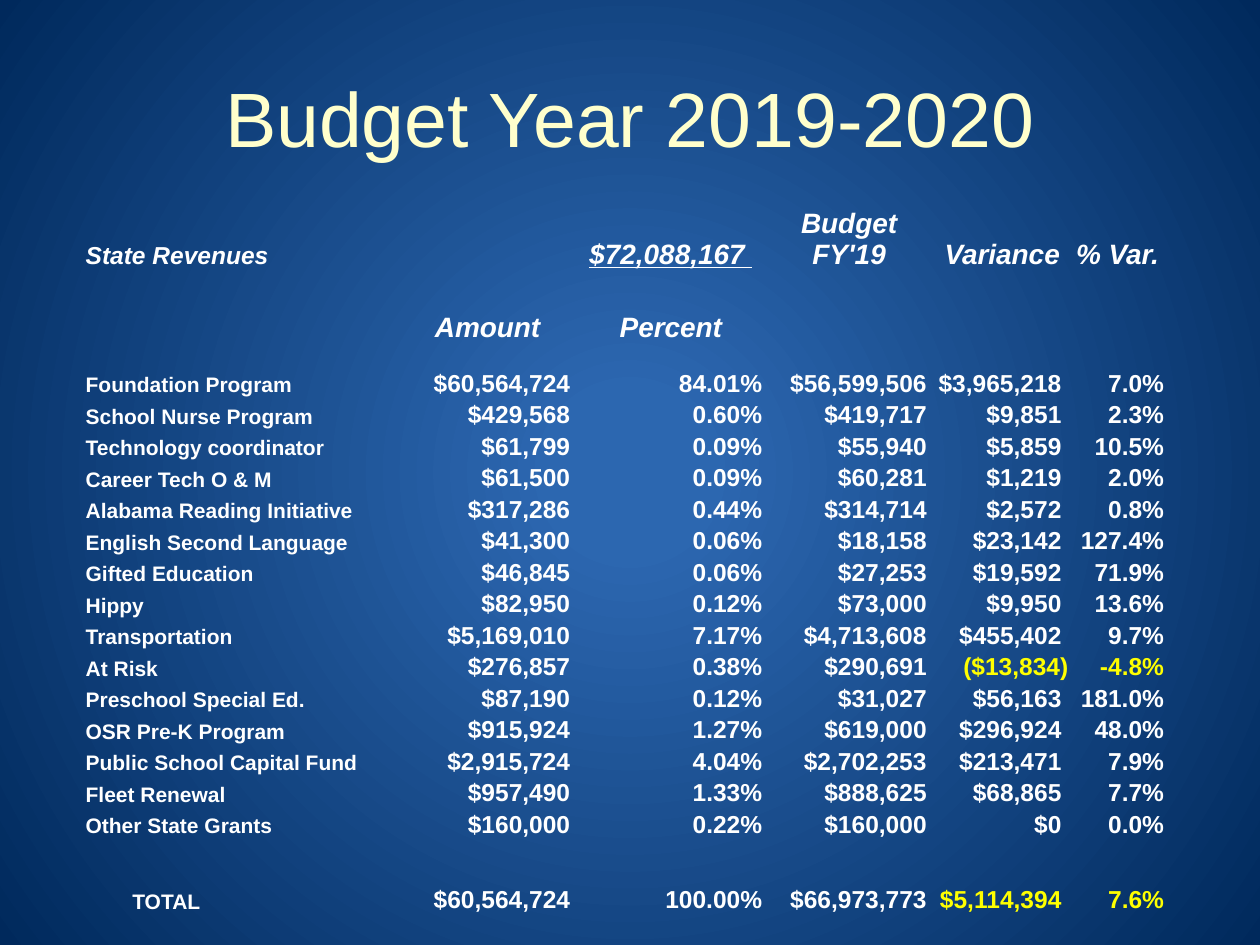
from dataclasses import dataclass

from lxml import etree
from pptx import Presentation
from pptx.dml.color import RGBColor
from pptx.enum.text import MSO_ANCHOR, PP_ALIGN
from pptx.oxml.ns import qn
from pptx.util import Inches, Pt

LEFT, CENTER, RIGHT = PP_ALIGN.LEFT, PP_ALIGN.CENTER, PP_ALIGN.RIGHT
BOTTOM, MIDDLE = MSO_ANCHOR.BOTTOM, MSO_ANCHOR.MIDDLE

FONT = "Arial"
CREAM = RGBColor(0xFF, 0xFF, 0xCC)
WHITE = RGBColor(0xFF, 0xFF, 0xFF)
YELLOW = RGBColor(0xFF, 0xFF, 0x00)
BLUE = RGBColor(0x2C, 0x67, 0xB0)
NAVY = RGBColor(0x00, 0x29, 0x5C)

NO_STYLE_NO_GRID = "{2D5ABB26-0587-4C30-8999-92F81FD0307C}"
COLUMN_WIDTHS = [2.48, 1.44, 1.47, 1.36, 1.07, 0.76]
ROW_HEIGHTS = [0.22, 0.44, 0.29, 0.29, 0.18] + [0.25] * 15 + [0.31, 0.29, 0.18]
HEADER_ROW, SUBHEADER_ROW, FIRST_REVENUE_ROW, TOTAL_ROW = 1, 3, 5, 21
TOTAL_INDENT = 0.38


@dataclass
class Revenue:
    name: str
    amount: str
    percent: str
    budget: str
    variance: str
    change: str
    highlight: bool = False


@dataclass
class CellStyle:
    size: int
    align: PP_ALIGN
    color: RGBColor = WHITE
    italic: bool = False
    underline: bool = False
    indent: float = 0.01


REVENUES = [
    Revenue("Foundation Program", "$60,564,724 ", "84.01%", "$56,599,506 ", "$3,965,218 ", "7.0%"),
    Revenue("School Nurse Program", "$429,568 ", "0.60%", "$419,717 ", "$9,851 ", "2.3%"),
    Revenue("Technology coordinator", "$61,799 ", "0.09%", "$55,940 ", "$5,859 ", "10.5%"),
    Revenue("Career Tech O & M", "$61,500 ", "0.09%", "$60,281 ", "$1,219 ", "2.0%"),
    Revenue("Alabama Reading Initiative", "$317,286 ", "0.44%", "$314,714 ", "$2,572 ", "0.8%"),
    Revenue("English Second Language", "$41,300 ", "0.06%", "$18,158 ", "$23,142 ", "127.4%"),
    Revenue("Gifted Education", "$46,845 ", "0.06%", "$27,253 ", "$19,592 ", "71.9%"),
    Revenue("Hippy", "$82,950 ", "0.12%", "$73,000 ", "$9,950 ", "13.6%"),
    Revenue("Transportation", "$5,169,010 ", "7.17%", "$4,713,608 ", "$455,402 ", "9.7%"),
    Revenue("At Risk", "$276,857 ", "0.38%", "$290,691 ", "($13,834)", "-4.8%", True),
    Revenue("Preschool Special Ed.", "$87,190 ", "0.12%", "$31,027 ", "$56,163 ", "181.0%"),
    Revenue("OSR Pre-K Program", "$915,924 ", "1.27%", "$619,000 ", "$296,924 ", "48.0%"),
    Revenue("Public School Capital Fund", "$2,915,724 ", "4.04%", "$2,702,253 ", "$213,471 ", "7.9%"),
    Revenue("Fleet Renewal", "$957,490 ", "1.33%", "$888,625 ", "$68,865 ", "7.7%"),
    Revenue("Other State Grants", "$160,000 ", "0.22%", "$160,000 ", "$0 ", "0.0%"),
]
TOTAL = Revenue("TOTAL", "$60,564,724 ", "100.00%", "$66,973,773 ", "$5,114,394 ", "7.6%", True)


def apply_format(target, values: dict) -> None:
    for name, value in values.items():
        setattr(target, name, value)


def paint_background(slide) -> None:
    fill = slide.background.fill
    fill.gradient()
    for stop, position, color in zip(fill.gradient_stops, (0.1, 1), (BLUE, NAVY)):
        stop.position = position
        stop.color.rgb = color
    # Turn the linear gradient into a circular one
    gradient = slide.element.find(".//" + qn("a:gradFill"))
    gradient.remove(gradient.find(qn("a:lin")))
    circle = etree.SubElement(gradient, qn("a:path"), path="circle")
    etree.SubElement(circle, qn("a:fillToRect"), l="50000", t="50000", r="50000", b="50000")


def write_title(slide, text: str) -> None:
    title = slide.shapes.title
    apply_format(title, {"left": Inches(0.5), "top": Inches(0.3),
                         "width": Inches(9), "height": Inches(1.25)})
    title.text_frame.text = text
    title.text_frame.vertical_anchor = MIDDLE
    paragraph = title.text_frame.paragraphs[0]
    paragraph.alignment = CENTER
    apply_format(paragraph.runs[0].font, {"name": FONT, "size": Pt(44)})
    paragraph.runs[0].font.color.rgb = CREAM


def add_plain_table(slide):
    frame = slide.shapes.add_table(
        len(ROW_HEIGHTS), len(COLUMN_WIDTHS), Inches(0.67), Inches(1.42),
        Inches(sum(COLUMN_WIDTHS)), Inches(sum(ROW_HEIGHTS)))
    table = frame.table
    apply_format(table, {"first_row": False, "horz_banding": False})
    frame.element.find(".//" + qn("a:tableStyleId")).text = NO_STYLE_NO_GRID
    for column, width in zip(table.columns, COLUMN_WIDTHS):
        column.width = Inches(width)
    for row, height in zip(table.rows, ROW_HEIGHTS):
        row.height = Inches(height)
    for cell in table.iter_cells():
        cell.fill.background()
        apply_format(cell, {"vertical_anchor": BOTTOM, "margin_left": Inches(0.01),
                            "margin_right": Inches(0.01), "margin_top": Inches(0.01),
                            "margin_bottom": 0})
        # A small end mark keeps empty rows at their set height
        paragraph = cell.text_frame.paragraphs[0]
        etree.SubElement(paragraph._p, qn("a:endParaRPr"), sz="800")
    return table


def write_cell(cell, text: str, style: CellStyle) -> None:
    cell.margin_left = Inches(style.indent)
    paragraph = cell.text_frame.paragraphs[0]
    paragraph.alignment = style.align
    run = paragraph.add_run()
    run.text = text
    apply_format(run.font, {"name": FONT, "size": Pt(style.size), "bold": True,
                            "italic": style.italic, "underline": style.underline})
    run.font.color.rgb = style.color


def write_headers(table) -> None:
    header = CellStyle(16, CENTER, italic=True)
    write_cell(table.cell(HEADER_ROW, 0), "State Revenues", CellStyle(14, LEFT, italic=True))
    write_cell(table.cell(HEADER_ROW, 2), "$72,088,167 ",
               CellStyle(16, CENTER, italic=True, underline=True))
    for column, text in enumerate(("Budget FY'19", "Variance", "% Var."), start=3):
        write_cell(table.cell(HEADER_ROW, column), text, header)
    for column, text in enumerate(("Amount", "Percent"), start=1):
        write_cell(table.cell(SUBHEADER_ROW, column), text, header)


def write_revenue(table, row: int, revenue: Revenue, indent: float = 0.01) -> None:
    write_cell(table.cell(row, 0), revenue.name, CellStyle(12, LEFT, indent=indent))
    figures = (revenue.amount, revenue.percent, revenue.budget, revenue.variance, revenue.change)
    for column, text in enumerate(figures, start=1):
        color = YELLOW if revenue.highlight and column >= 4 else WHITE
        write_cell(table.cell(row, column), text, CellStyle(14, RIGHT, color))


def main() -> None:
    presentation = Presentation()
    presentation.slide_width = Inches(10)
    presentation.slide_height = Inches(7.5)
    slide = presentation.slides.add_slide(presentation.slide_layouts[5])

    paint_background(slide)
    write_title(slide, "Budget Year 2019-2020")

    # Revenue table
    table = add_plain_table(slide)
    write_headers(table)
    for row, revenue in enumerate(REVENUES, start=FIRST_REVENUE_ROW):
        write_revenue(table, row, revenue)
    write_revenue(table, TOTAL_ROW, TOTAL, TOTAL_INDENT)

    presentation.save("out.pptx")


if __name__ == "__main__":
    main()
